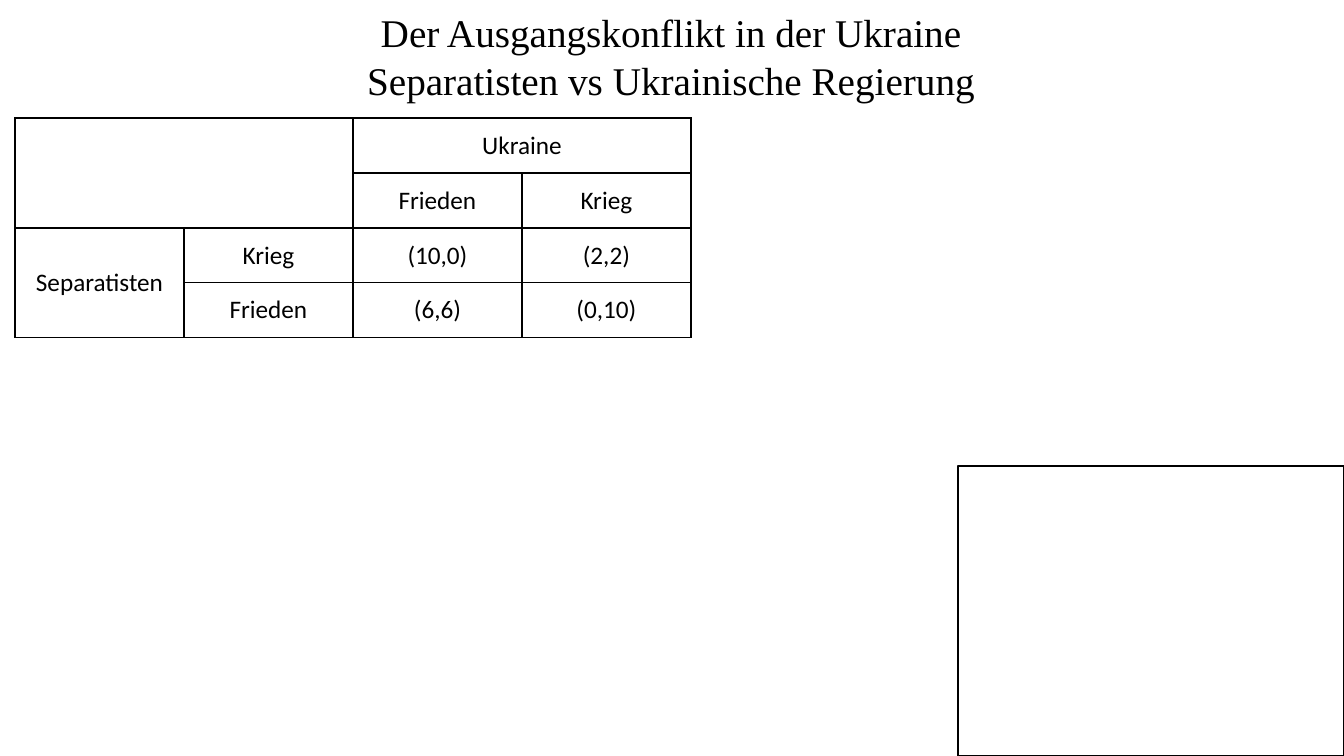
import itertools

import pptx
import pptx.dml.color
import pptx.enum.shapes
import pptx.enum.text
import pptx.oxml
import pptx.oxml.ns
import pptx.util

PX = 914400 / 100.8
COLORS = {"ink": "000000", "paper": "FFFFFF"}

TITLE = ["Der Ausgangskonflikt in der Ukraine", "Separatisten vs Ukrainische Regierung"]
PAYOFFS = [
    ["", "", "Ukraine", ""],
    ["", "", "Frieden", "Krieg"],
    ["Separatisten", "Krieg", "(10,0)", "(2,2)"],
    ["", "Frieden", "(6,6)", "(0,10)"],
]
MERGES = [((0, 0), (1, 1)), ((0, 2), (0, 3)), ((2, 0), (3, 0))]


def px(n):
    return pptx.util.Emu(round(n * PX))


def box(*lengths):
    return [px(n) for n in lengths]


def rgb(name):
    return pptx.dml.color.RGBColor.from_string(COLORS[name])


def write(tf, lines, size=18, font="Calibri", color="ink", before=0):
    """Put one centred paragraph per line into a text frame."""
    for i, line in enumerate(lines):
        p = tf.add_paragraph() if i else tf.paragraphs[0]
        p.alignment = pptx.enum.text.PP_ALIGN.CENTER
        p.space_before = pptx.util.Pt(before if i else 0)
        r = p.add_run()
        r.text = line
        r.font.size = pptx.util.Pt(size)
        r.font.name = font
        r.font.color.rgb = rgb(color)


def add_title(s, lines, left, top, width, height):
    sp = s.shapes.title
    sp.left, sp.top, sp.width, sp.height = box(left, top, width, height)
    tf = sp.text_frame
    tf.word_wrap = True
    tf.auto_size = pptx.enum.text.MSO_AUTO_SIZE.NONE
    tf.vertical_anchor = pptx.enum.text.MSO_ANCHOR.TOP
    write(tf, lines, size=28, font="Times New Roman", before=1)


def add_frame(s, left, top, width, height):
    sp = s.shapes.add_shape(
        pptx.enum.shapes.MSO_SHAPE.RECTANGLE, *box(left, top, width, height))
    sp.shadow.inherit = False
    sp.fill.background()
    sp.line.color.rgb = rgb("ink")
    sp.line.width = pptx.util.Pt(1)


def set_borders(cell, color="ink", width=1):
    tc_pr = cell._tc.get_or_add_tcPr()
    for i, side in enumerate(("lnL", "lnR", "lnT", "lnB")):
        tc_pr.insert(i, pptx.oxml.parse_xml(
            f'<a:{side} {pptx.oxml.ns.nsdecls("a")} w="{pptx.util.Pt(width)}">'
            f'<a:solidFill><a:srgbClr val="{COLORS[color]}"/></a:solidFill></a:{side}>'))


def add_payoff_table(s, rows, merges, left, top, col_width, row_height):
    n_rows, n_cols = len(rows), len(rows[0])
    table = s.shapes.add_table(
        n_rows, n_cols,
        *box(left, top, n_cols * col_width, n_rows * row_height)).table
    table.first_row = table.horz_banding = False
    for col in table.columns:
        col.width = px(col_width)
    for row in table.rows:
        row.height = px(row_height)
    for start, end in merges:
        table.cell(*start).merge(table.cell(*end))
    for r, c in itertools.product(range(n_rows), range(n_cols)):
        cell = table.cell(r, c)
        cell.fill.background()
        cell.vertical_anchor = pptx.enum.text.MSO_ANCHOR.MIDDLE
        set_borders(cell)
        if rows[r][c]:
            write(cell.text_frame, [rows[r][c]])


def main():
    prs = pptx.Presentation()
    prs.slide_width, prs.slide_height = box(1344, 756)
    s = prs.slides.add_slide(prs.slide_layouts[5])
    s.background.fill.solid()
    s.background.fill.fore_color.rgb = rgb("paper")
    add_title(s, TITLE, 0, 3, 1342, 59)
    add_frame(s, 958, 466, 386, 290)
    add_payoff_table(s, PAYOFFS, MERGES, 15, 118, 169, 55)
    prs.save("out.pptx")


if __name__ == "__main__":
    main()
